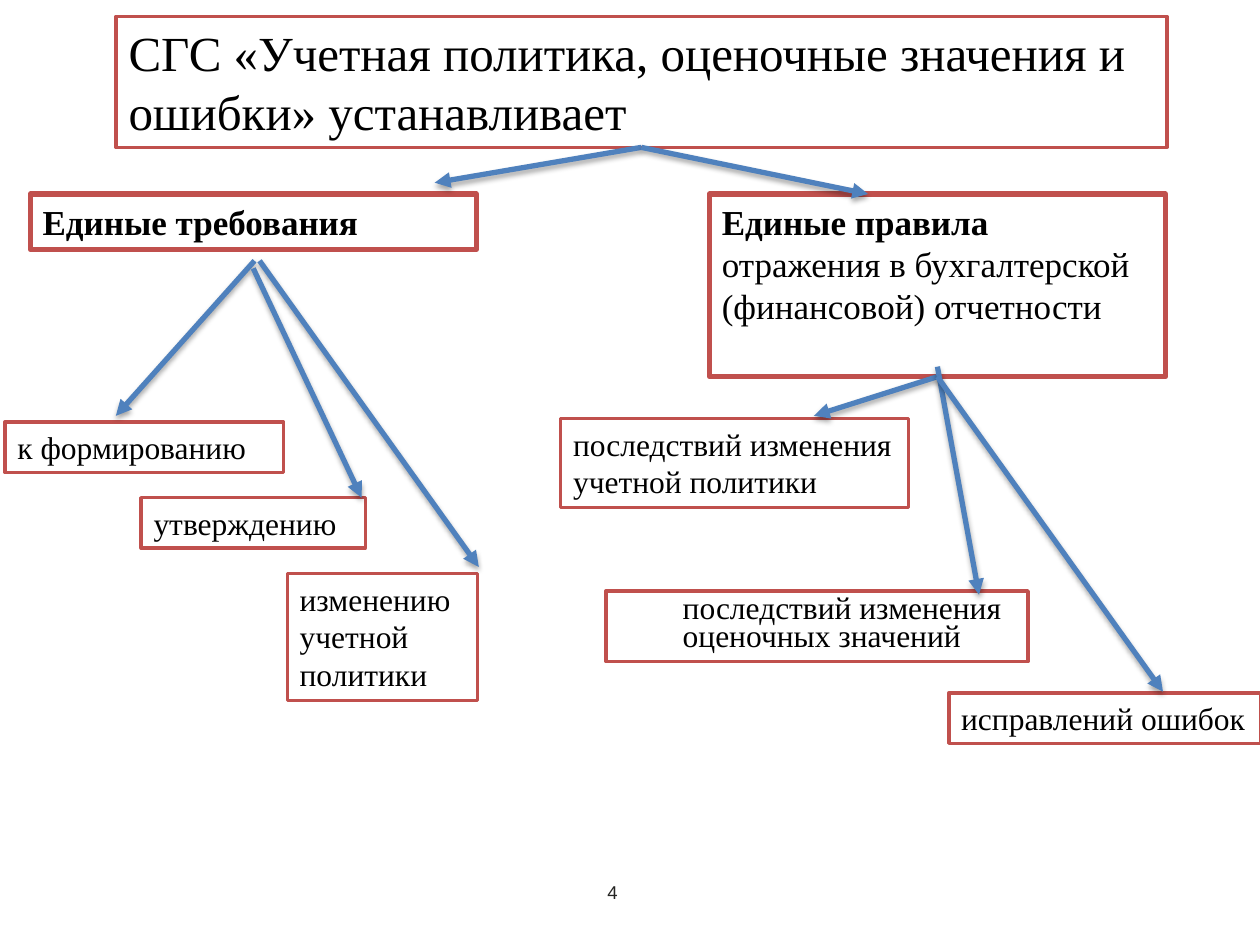
from dataclasses import dataclass
from typing import Optional

from lxml.etree import SubElement as Sub
from pptx import Presentation
from pptx.dml.color import RGBColor as Rgb
from pptx.enum.shapes import MSO_CONNECTOR as Conn, MSO_SHAPE as Kind
from pptx.enum.text import MSO_ANCHOR as Anchor, MSO_AUTO_SIZE as Auto, PP_ALIGN as Align
from pptx.oxml.ns import qn
from pptx.util import Inches, Pt


@dataclass(frozen=True)
class Theme:
    paper: Rgb = Rgb(0xFF, 0xFF, 0xFF)
    ink: Rgb = Rgb(0, 0, 0)
    frame: Rgb = Rgb(0xC0, 0x50, 0x4D)
    arrow: Rgb = Rgb(0x4F, 0x81, 0xBD)
    gray: Rgb = Rgb(0x25, 0x25, 0x23)
    serif: str = "Times New Roman"
    sans: str = "Arial"
    title: float = 28
    head: float = 20
    leaf: float = 18
    foot: float = 10.6
    thin: float = 2
    thick: float = 3


@dataclass(frozen=True)
class Box:
    left: float
    top: float
    width: float
    height: float
    text: str
    lead: str = ""
    tight: bool = False


@dataclass(frozen=True)
class Arrow:
    start: tuple[float, float]
    end: tuple[float, float]
    source: Optional[str] = None


THEME = Theme()
TITLE = Box(0.92, 0.13, 8.34, 1.04, "СГС «Учетная политика, оценочные значения и ошибки» устанавливает")
HEADS = {
    "needs": Box(0.24, 1.54, 3.54, 0.44, "", "Единые требования"),
    "rules": Box(5.63, 1.54, 3.62, 1.45, "отражения в бухгалтерской (финансовой) отчетности", "Единые правила "),
}
LEAVES = [
    Box(0.04, 3.35, 2.21, 0.4, "к формированию"),
    Box(1.12, 3.95, 1.78, 0.4, "утверждению"),
    Box(2.28, 4.55, 1.51, 1.01, "изменению учетной политики"),
    Box(4.45, 3.32, 2.76, 0.71, "последствий изменения учетной политики"),
    Box(4.81, 4.69, 3.35, 0.56, "последствий изменения \nоценочных значений", tight=True),
    Box(7.53, 5.5, 2.48, 0.4, "исправлений ошибок"),
]
ARROWS = [
    Arrow((2.02, 2.07), (0.92, 3.3)),
    Arrow((2.01, 2.13), (2.87, 3.95)),
    Arrow((2.06, 2.07), (3.8, 4.5)),
    Arrow((7.44, 2.99), (6.46, 3.3), "rules"),
    Arrow((7.44, 2.91), (7.77, 4.72)),
    Arrow((7.44, 2.99), (9.23, 5.49), "rules"),
    Arrow((5.09, 1.17), (3.45, 1.45), "title"),
    Arrow((5.09, 1.17), (6.89, 1.54), "title"),
]


def style(font, size: float, color: Rgb, name: str, bold: bool = False) -> None:
    """Set the look of one run."""
    font.size, font.name, font.bold = Pt(size), name, bold
    font.color.rgb = color


def dress(shape, box: Box, size: float, width: float) -> None:
    """Place a framed shape and fill in its text."""
    shape.left, shape.top = Inches(box.left), Inches(box.top)
    shape.width, shape.height = Inches(box.width), Inches(box.height)
    shape.fill.solid()
    shape.fill.fore_color.rgb = THEME.paper
    shape.line.color.rgb = THEME.frame
    shape.line.width = Pt(width)
    frame = shape.text_frame
    frame.word_wrap, frame.auto_size = True, Auto.NONE
    frame.vertical_anchor = Anchor.TOP
    frame.text = box.lead or box.text
    if box.lead and box.text:
        frame.paragraphs[0].add_run().text = box.text
    for para in frame.paragraphs:
        para.alignment = Align.JUSTIFY if box.tight else Align.LEFT
        if box.tight:
            para.line_spacing = Pt(16.2)
            para._p.get_or_add_pPr().set("indent", str(Inches(0.51)))
        for spot, run in enumerate(para.runs):
            style(run.font, size, THEME.ink, THEME.serif, bool(box.lead) and spot == 0)


def draw_box(slide, box: Box, size: float, width: float):
    """Add one framed rectangle."""
    shape = slide.shapes.add_shape(Kind.RECTANGLE, 0, 0, 0, 0)
    shape.shadow.inherit = False
    dress(shape, box, size, width)
    return shape


def draw_arrow(slide, arrow: Arrow, nodes: dict) -> None:
    """Add one shadowed arrow, joined to its source box if it has one."""
    ends = [Inches(value) for value in arrow.start + arrow.end]
    line = slide.shapes.add_connector(Conn.STRAIGHT, *ends)
    if arrow.source:
        line.begin_connect(nodes[arrow.source], 2)
    line.line.color.rgb = THEME.arrow
    line.line.width = Pt(THEME.thick)
    Sub(line.line._get_or_add_ln(), qn("a:tailEnd"), type="triangle")
    effects = Sub(line._element.spPr, qn("a:effectLst"))
    shade = Sub(effects, qn("a:outerShdw"), blurRad=str(Pt(3.1)), dist=str(Pt(1.8)),
                dir="5400000", rotWithShape="0")
    color = Sub(shade, qn("a:srgbClr"), val=str(THEME.ink))
    Sub(color, qn("a:alpha"), val="35000")


def draw_number(slide, text: str) -> None:
    """Add the page number at the foot."""
    area = [Inches(value) for value in (0.08, 7.01, 5.16, 0.17)]
    frame = slide.shapes.add_textbox(*area).text_frame
    frame.word_wrap = True
    frame.margin_left = frame.margin_top = frame.margin_right = frame.margin_bottom = 0
    para = frame.paragraphs[0]
    para.text = text
    para.line_spacing = Pt(11.6)
    para._p.get_or_add_pPr().set("marL", str(Inches(4.74)))
    style(para.runs[0].font, THEME.foot, THEME.gray, THEME.sans)


def main() -> None:
    """Build and save the slide."""
    deck = Presentation()
    deck.slide_width, deck.slide_height = Inches(10), Inches(7.5)
    slide = deck.slides.add_slide(deck.slide_layouts[5])
    nodes = {"title": slide.shapes.title}
    dress(nodes["title"], TITLE, THEME.title, THEME.thin)
    for name, box in HEADS.items():
        nodes[name] = draw_box(slide, box, THEME.head, THEME.thick)
    for box in LEAVES:
        draw_box(slide, box, THEME.leaf, THEME.thin)
    for arrow in ARROWS:
        draw_arrow(slide, arrow, nodes)
    draw_number(slide, "4")
    deck.save("out.pptx")


if __name__ == "__main__":
    main()
